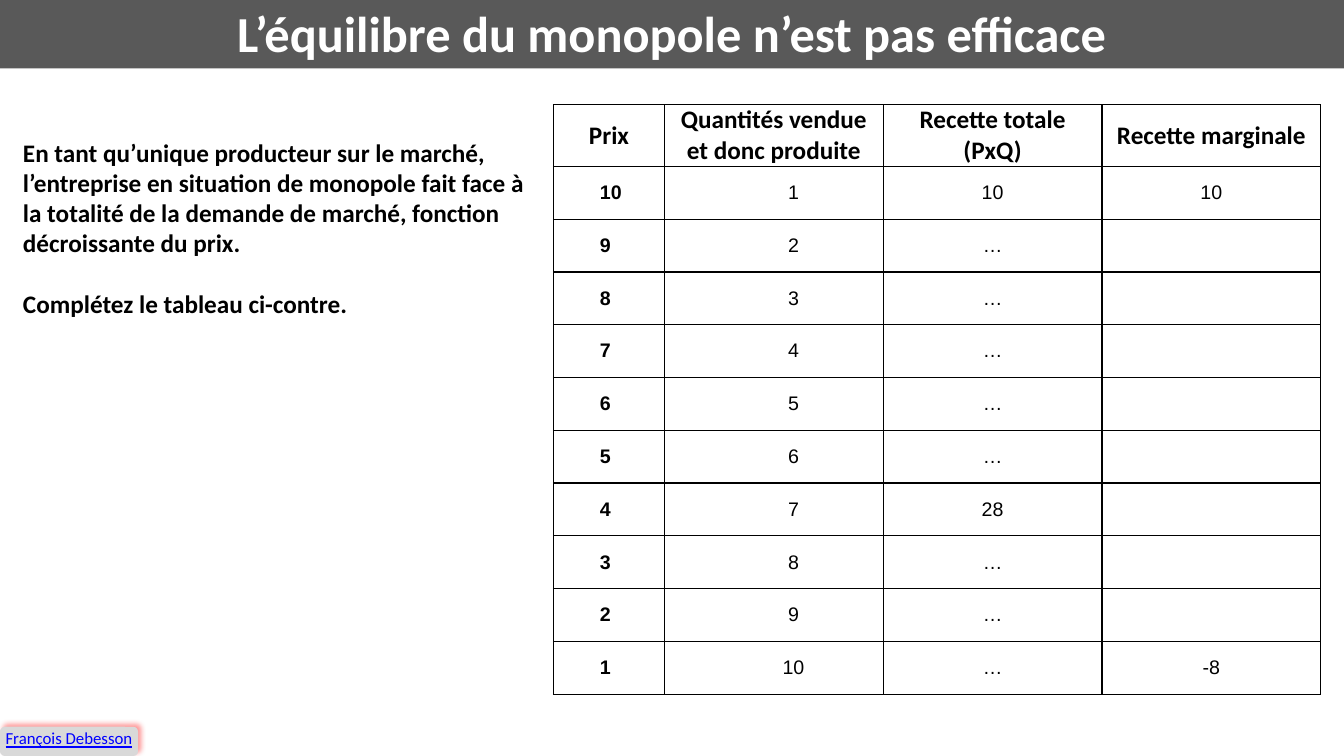
from lxml.etree import SubElement
from pptx import Presentation
from pptx.dml.color import RGBColor
from pptx.enum.shapes import MSO_SHAPE as Shape
from pptx.enum.text import MSO_ANCHOR as Anchor, PP_ALIGN as Align
from pptx.oxml import parse_xml
from pptx.oxml.ns import nsdecls, qn
from pptx.util import Inches, Pt

BLACK, WHITE, DARK_GREY, LIGHT_GREY = "000000", "FFFFFF", "595959", "D9D9D9"
BLUE, RED = "0000FF", "FF0000"


def color(value):
    return RGBColor.from_string(value)


class SlideBuilder:
    heading_font = "Calibri"
    number_font = "Arial"

    def __init__(self, deck):
        self.page = deck.slides.add_slide(deck.slide_layouts[6])

    def style(self, para, size, ink=BLACK, bold=False, font=None, align=Align.LEFT):
        para.alignment = align
        for span in para.runs:
            span.font.name = font or self.heading_font
            span.font.size = Pt(size)
            span.font.bold = bold
            span.font.color.rgb = color(ink)

    def label(self, kind, place, text, fill, inset, size, ink, bold=False, anchor=Anchor.TOP):
        box = self.page.shapes.add_shape(kind, *map(Inches, place))
        box.shadow.inherit = False
        box.fill.solid()
        box.fill.fore_color.rgb = color(fill)
        box.line.fill.background()
        frame = box.text_frame
        frame.word_wrap = True
        frame.vertical_anchor = anchor
        frame.margin_left = frame.margin_right = Inches(inset)
        frame.margin_top = frame.margin_bottom = Inches(inset)
        frame.text = text
        self.style(frame.paragraphs[0], size, ink, bold, align=Align.CENTER)
        return box

    def glow_shadow(self, box, ink, opacity, blur, distance, angle):
        effects = box._element.spPr.find(qn("a:effectLst"))
        effects.append(parse_xml(
            f'<a:outerShdw {nsdecls("a")} blurRad="{Pt(blur)}" dist="{Pt(distance)}" '
            f'dir="{angle * 60000}" algn="bl" rotWithShape="0"><a:srgbClr val="{ink}">'
            f'<a:alpha val="{opacity * 1000}"/></a:srgbClr></a:outerShdw>'))

    def text(self, place, paragraphs, size, gap):
        box = self.page.shapes.add_textbox(*map(Inches, place))
        frame = box.text_frame
        frame.word_wrap = True
        frame.text = "\n".join(paragraphs)
        for para in frame.paragraphs:
            self.style(para, size, bold=True)
        for para in frame.paragraphs[1:]:
            para.space_before = Pt(gap)

    def cell_border(self, cell):
        properties = cell._tc.get_or_add_tcPr()
        for position, side in enumerate(("lnL", "lnR", "lnT", "lnB")):
            properties.insert(position, parse_xml(
                f'<a:{side} {nsdecls("a")} w="{Pt(1)}"><a:solidFill>'
                f'<a:srgbClr val="{BLACK}"/></a:solidFill></a:{side}>'))

    def table(self, place, widths, header_height, rows, indent):
        left, top, width, height = map(Inches, place)
        grid = self.page.shapes.add_table(len(rows), len(widths), left, top, width, height).table
        grid.first_row = grid.horz_banding = False
        for column, column_width in zip(grid.columns, widths):
            column.width = Inches(column_width)
        body_height = (place[3] - header_height) / (len(rows) - 1)
        for r, values in enumerate(rows):
            grid.rows[r].height = Inches(body_height if r else header_height)
            for c, value in enumerate(values):
                cell = grid.cell(r, c)
                cell.fill.background()
                self.cell_border(cell)
                cell.vertical_anchor = Anchor.MIDDLE
                cell.margin_left = cell.margin_right = Inches(0.07)
                cell.margin_top = cell.margin_bottom = 0
                cell.text = value
                for para in cell.text_frame.paragraphs:
                    if r == 0:
                        self.style(para, 18, bold=True, align=Align.CENTER)
                        continue
                    self.style(para, 14, bold=c == 0, font=self.number_font,
                               align=Align.CENTER if c else Align.LEFT)
                    if c < 2:
                        para._p.get_or_add_pPr().set("marL", str(Inches(indent)))


def main():
    deck = Presentation()
    deck.slide_width, deck.slide_height = Inches(13.33), Inches(7.5)
    slide = SlideBuilder(deck)

    # Title band
    slide.label(Shape.RECTANGLE, (0, -0.03, 13.33, 0.76 - 0.05),
                "L’équilibre du monopole n’est pas efficace",
                DARK_GREY, 0.04, 36, WHITE, bold=True, anchor=Anchor.MIDDLE)

    # Price and revenue table
    revenue = {10: "10", 4: "28"}
    marginal = {10: "10", 1: "-8"}
    header = ["Prix", "Quantités vendue et donc produite",
              "Recette totale\n(PxQ)", "Recette marginale"]
    body = [[str(price), str(11 - price), revenue.get(price, "…"), marginal.get(price, "")]
            for price in range(10, 0, -1)]
    slide.table((5.49, 1.04, 7.6, 5.85), (1.1, 2.17, 2.17, 2.17), 0.61,
                [header] + body, indent=0.39)

    # Author tag
    tag = slide.label(Shape.ROUNDED_RECTANGLE, (0, 7.21, 1.37, 0.29), "François Debesson",
                      LIGHT_GREY, 0, 12, BLUE)
    tag.text_frame.paragraphs[0].runs[0].font.underline = True
    slide.glow_shadow(tag, RED, opacity=40, blur=4, distance=3, angle=315)

    # Instructions
    slide.text((0.13, 1.31, 5.2, 1.92), [
        "En tant qu’unique producteur sur le marché, l’entreprise en situation de monopole "
        "fait face à la totalité de la demande de marché, fonction décroissante du prix.",
        "Complétez le tableau ci-contre."], size=18, gap=22)

    deck.save("out.pptx")


if __name__ == "__main__":
    main()
